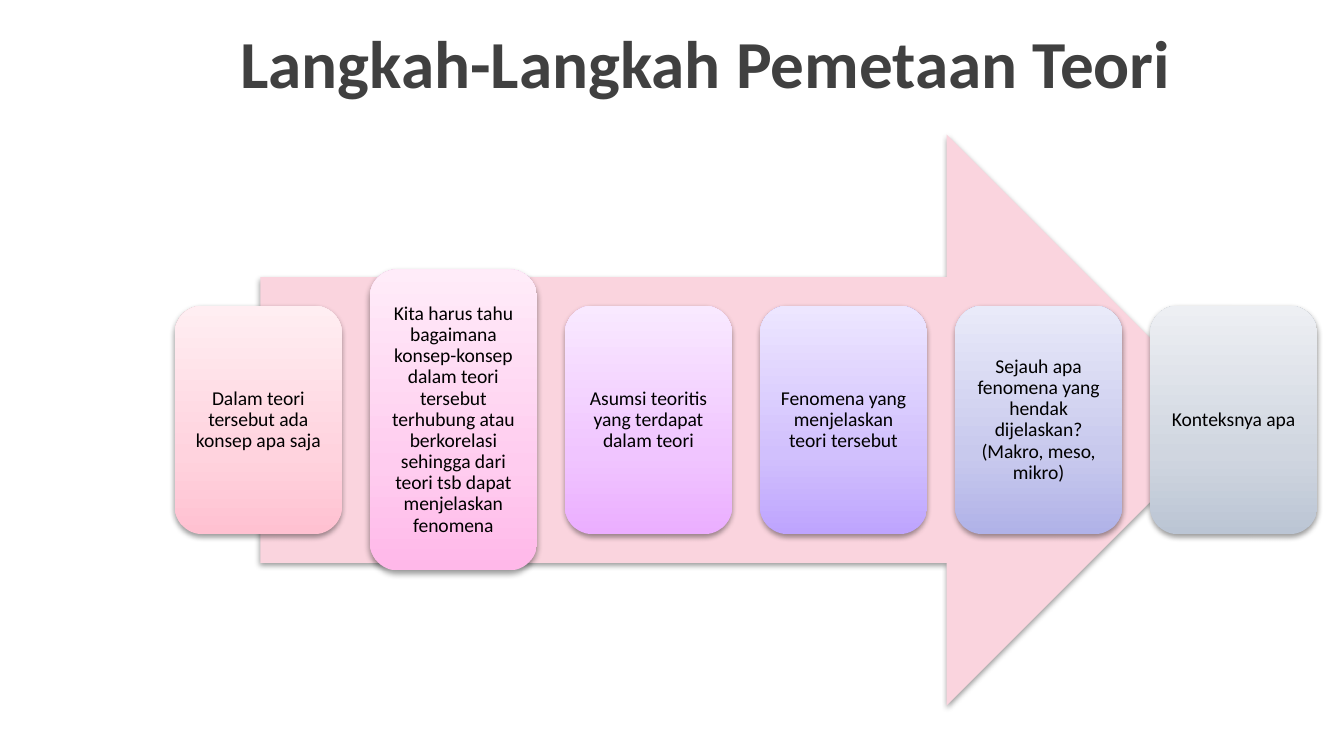
from copy import deepcopy
from pptx import Presentation
from pptx.dml.color import RGBColor
from pptx.enum import shapes, text
from pptx.oxml import parse_xml
from pptx.oxml.ns import nsdecls, qn
from pptx.util import Pt

# Content: text, box height, gradient from bottom to top
TITLE = "Langkah-Langkah Pemetaan Teori"
LOW, TALL = 122.4, 161.3
STEPS = [
    ("Dalam teori tersebut ada konsep apa saja", LOW,
     ("FFC1D1", "FFD3DE", "FFEEF2")),
    ("Kita harus tahu bagaimana konsep-konsep dalam teori tersebut terhubung "
     "atau berkorelasi sehingga dari teori tsb dapat menjelaskan fenomena", TALL,
     ("FFB8E9", "FFCCEF", "FFECF9")),
    ("Asumsi teoritis yang terdapat dalam teori", LOW,
     ("EBAEFF", "F0C5FF", "F9E9FF")),
    ("Fenomena yang menjelaskan teori tersebut", LOW,
     ("BEA4FE", "D1C0FD", "EDE6FF")),
    ("Sejauh apa fenomena yang hendak dijelaskan? (Makro, meso, mikro)", LOW,
     ("B0B2E8", "C8C9ED", "E9EAF9")),
    ("Konteksnya apa", LOW,
     ("BBC5D4", "D0D6E0", "EDEFF3")),
]
THEME = {"font": "Calibri", "title": "404040", "body": "000000",
         "arrow": "FAD4DE", "big": 36, "small": 10.5}

# Layout
LEFT, MID, WIDE, STEP = 93.6, 225, 89.6, 104.5
STOPS = (0, 0.35, 1)


def write(shape, words, size, color, bold=False, align=text.PP_ALIGN.CENTER,
          inset=(3.6, 3.6), line=0.9, after=3.7):
    frame = shape.text_frame
    frame.word_wrap = True
    frame.vertical_anchor = text.MSO_ANCHOR.MIDDLE
    frame.margin_left = frame.margin_right = Pt(inset[0])
    frame.margin_top = frame.margin_bottom = Pt(inset[1])
    para = frame.paragraphs[0]
    para.alignment, para.line_spacing = align, line
    para.space_after = Pt(after)
    run = para.add_run()
    run.text = words
    font = run.font
    font.name, font.size, font.bold = THEME["font"], Pt(size), bold
    font.color.rgb = RGBColor.from_string(color)


def draw(slide, kind, *box):
    shape = slide.shapes.add_shape(kind, *map(Pt, box))
    shape.line.fill.background()
    shape.shadow.inherit = False
    shape.element.spPr.find(qn("a:effectLst")).append(parse_xml(
        f'<a:outerShdw {nsdecls("a")} blurRad="{Pt(3.1)}" dist="{Pt(1.6)}" '
        'dir="5400000" rotWithShape="0"><a:srgbClr val="000000">'
        '<a:alpha val="38000"/></a:srgbClr></a:outerShdw>'))
    return shape


def shade(shape, colors):
    fill = shape.fill
    fill.gradient()
    fill.gradient_angle = 90
    # A new gradient has two stops: add the middle one
    stops = shape.element.spPr.find(qn("a:gradFill")).find(qn("a:gsLst"))
    stops.insert(1, deepcopy(stops[0]))
    for stop, place, color in zip(fill.gradient_stops, STOPS, colors):
        stop.position = place
        stop.color.rgb = RGBColor.from_string(color)


def main():
    deck = Presentation()
    deck.slide_width, deck.slide_height = Pt(720), Pt(405)
    slide = deck.slides.add_slide(deck.slide_layouts[6])

    # Title
    title = slide.shapes.add_textbox(Pt(121.7), Pt(2.2), Pt(598.3), Pt(61.2))
    write(title, TITLE, THEME["big"], THEME["title"], bold=True,
          align=text.PP_ALIGN.LEFT, inset=(7.2, 3.6), line=1, after=0)

    # Arrow behind the steps
    arrow = draw(slide, shapes.MSO_SHAPE.RIGHT_ARROW, 139.5, MID - 153, 520.6, 306)
    arrow.fill.solid()
    arrow.fill.fore_color.rgb = RGBColor.from_string(THEME["arrow"])

    # Steps, centred on the arrow
    for i, (words, high, colors) in enumerate(STEPS):
        card = draw(slide, shapes.MSO_SHAPE.ROUNDED_RECTANGLE,
                    LEFT + i * STEP, MID - high / 2, WIDE, high)
        shade(card, colors)
        write(card, words, THEME["small"], THEME["body"])

    deck.save("out.pptx")


if __name__ == "__main__":
    main()
